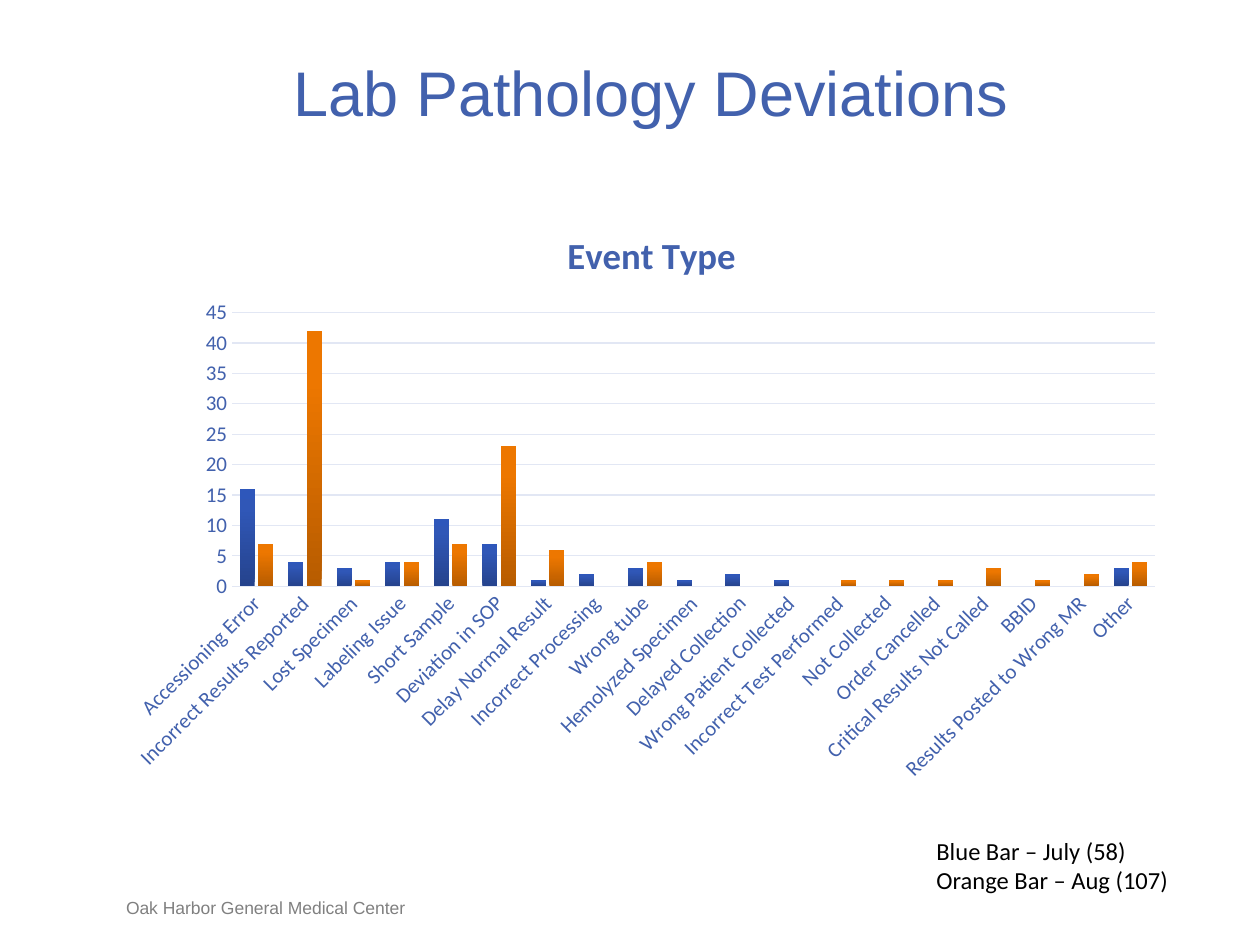
from dataclasses import dataclass

from lxml import etree
from pptx import Presentation
from pptx.chart.data import CategoryChartData
from pptx.dml.color import RGBColor
from pptx.enum.chart import XL_CHART_TYPE, XL_TICK_MARK
from pptx.enum.text import MSO_ANCHOR, PP_ALIGN
from pptx.oxml import parse_xml
from pptx.oxml.ns import nsdecls, qn
from pptx.util import Pt

CLUSTERED = XL_CHART_TYPE.COLUMN_CLUSTERED
NO_TICK = XL_TICK_MARK.NONE
LEFT, CENTER = PP_ALIGN.LEFT, PP_ALIGN.CENTER
TOP, BOTTOM = MSO_ANCHOR.TOP, MSO_ANCHOR.BOTTOM


@dataclass(frozen=True)
class Theme:
    heading_font: str = "Arial"
    body_font: str = "Calibri"
    blue: str = "4261AD"
    grid: str = "E2E7F4"
    gray: str = "808080"
    black: str = "000000"
    title_size: float = 36
    chart_title_size: float = 21
    key_size: float = 14
    axis_size: float = 12
    footer_size: float = 10


@dataclass(frozen=True)
class Frame:
    left: float
    top: float
    width: float
    height: float


@dataclass(frozen=True)
class Month:
    name: str
    stops: tuple
    values: tuple


THEME = Theme()
EVENTS = (
    "Accessioning Error", "Incorrect Results Reported", "Lost Specimen",
    "Labeling Issue", "Short Sample", "Deviation in SOP",
    "Delay Normal Result", "Incorrect Processing", "Wrong tube",
    "Hemolyzed Specimen", "Delayed Collection", "Wrong Patient Collected",
    "Incorrect Test Performed", "Not Collected", "Order Cancelled",
    "Critical Results Not Called", "BBID", "Results Posted to Wrong MR", "Other",
)
MONTHS = (
    Month("Series 1", ((0, "25438D"), (80, "3057B7"), (100, "2E57BB")),
          (16, 4, 3, 4, 11, 7, 1, 2, 3, 1, 2, 1) + (None,) * 6 + (3,)),
    Month("Series 2", ((0, "B75C00"), (80, "ED7700"), (100, "EE7800")),
          (7, 42, 1, 4, 7, 23, 6, None, 4, None, None, None, 1, 1, 1, 3, 1, 2, 4)),
)


def style_font(font, *, name: str, size: float, color: str, bold: bool = False) -> None:
    font.name = name
    font.size = Pt(size)
    font.bold = bold
    font.color.rgb = RGBColor.from_string(color)


def add_text(page, frame: Frame, text: str, *, font: str, size: float, color: str,
             align=LEFT, anchor=TOP, inset: tuple = (0, 0)) -> None:
    box = page.shapes.add_textbox(Pt(frame.left), Pt(frame.top),
                                  Pt(frame.width), Pt(frame.height))
    body = box.text_frame
    body.word_wrap = True
    body.vertical_anchor = anchor
    body.margin_left = body.margin_right = Pt(inset[0])
    body.margin_top = body.margin_bottom = Pt(inset[1])
    body.text = text
    for para in body.paragraphs:
        para.alignment = align
        for span in para.runs:
            style_font(span.font, name=font, size=size, color=color)


def fill_gradient(series, stops: tuple) -> None:
    marks = "".join(
        f'<a:gs pos="{position * 1000}"><a:srgbClr val="{color}"/></a:gs>'
        for position, color in stops)
    series.format.fill.background()
    properties = series.format.fill._xPr
    gradient = parse_xml(
        f'<a:gradFill {nsdecls("a")} rotWithShape="1"><a:gsLst>{marks}</a:gsLst>'
        '<a:lin ang="16200000" scaled="0"/></a:gradFill>')
    properties.replace(properties.find(qn("a:noFill")), gradient)


def place(parent, index: int, settings: dict) -> None:
    for old in parent.findall(qn("c:layout")):
        parent.remove(old)
    layout = parse_xml(f'<c:layout {nsdecls("c")}><c:manualLayout/></c:layout>')
    for name, value in settings.items():
        etree.SubElement(layout[0], qn(f"c:{name}")).set("val", str(value))
    parent.insert(index, layout)


def style_axis(axis) -> None:
    axis.major_tick_mark = axis.minor_tick_mark = NO_TICK
    style_font(axis.tick_labels.font, name=THEME.body_font,
               size=THEME.axis_size, color=THEME.blue)


def style_line(line) -> None:
    line.color.rgb = RGBColor.from_string(THEME.grid)
    line.width = Pt(0.75)


def add_event_chart(page, frame: Frame) -> None:
    data = CategoryChartData()
    data.categories = EVENTS
    for month in MONTHS:
        data.add_series(month.name, month.values)
    chart = page.shapes.add_chart(CLUSTERED, Pt(frame.left), Pt(frame.top),
                                  Pt(frame.width), Pt(frame.height), data).chart
    style_font(chart.font, name=THEME.body_font, size=THEME.footer_size, color=THEME.black)
    chart.has_legend = False
    title = chart.chart_title
    title.text_frame.text = "Event Type"
    style_font(title.text_frame.paragraphs[0].runs[0].font, name=THEME.body_font,
               size=THEME.chart_title_size, color=THEME.blue, bold=True)
    title.include_in_layout = False
    place(title._element, 1, {"xMode": "edge", "yMode": "edge", "x": 0.42, "y": 0.04})

    plot = chart.plots[0]
    plot.gap_width = 100
    plot.overlap = -24
    plot.vary_by_categories = False
    for series, month in zip(plot.series, MONTHS):
        fill_gradient(series, month.stops)
        series.invert_if_negative = False
    place(chart._chartSpace.chart.plotArea, 0, {
        "layoutTarget": "inner", "xMode": "edge", "yMode": "edge",
        "x": 0.11, "y": 0.19, "w": 0.87, "h": 0.46})

    events, counts = chart.category_axis, chart.value_axis
    for axis in (events, counts):
        style_axis(axis)
    style_line(events.format.line)
    events._element.find(qn("c:txPr")).find(qn("a:bodyPr")).set("rot", "-2700000")
    counts.minimum_scale, counts.maximum_scale, counts.major_unit = 0, 45, 5
    counts.format.line.fill.background()
    style_line(counts.major_gridlines.format.line)


def main() -> None:
    deck = Presentation()
    deck.slide_width, deck.slide_height = Pt(720), Pt(540)
    page = deck.slides.add_slide(deck.slide_layouts[6])
    add_text(page, Frame(72, 512.6, 228, 12.2), "Oak Harbor General Medical Center",
             font=THEME.heading_font, size=THEME.footer_size, color=THEME.gray,
             anchor=BOTTOM)
    add_text(page, Frame(66, 30, 612, 44), "Lab Pathology Deviations",
             font=THEME.heading_font, size=THEME.title_size, color=THEME.blue,
             align=CENTER, anchor=BOTTOM)
    add_event_chart(page, Frame(66, 114, 606, 340))
    add_text(page, Frame(528, 474, 148, 41), "Blue Bar – July (58)\nOrange Bar – Aug (107)",
             font=THEME.body_font, size=THEME.key_size, color=THEME.black,
             inset=(7.2, 3.6))
    deck.save("out.pptx")


if __name__ == "__main__":
    main()
